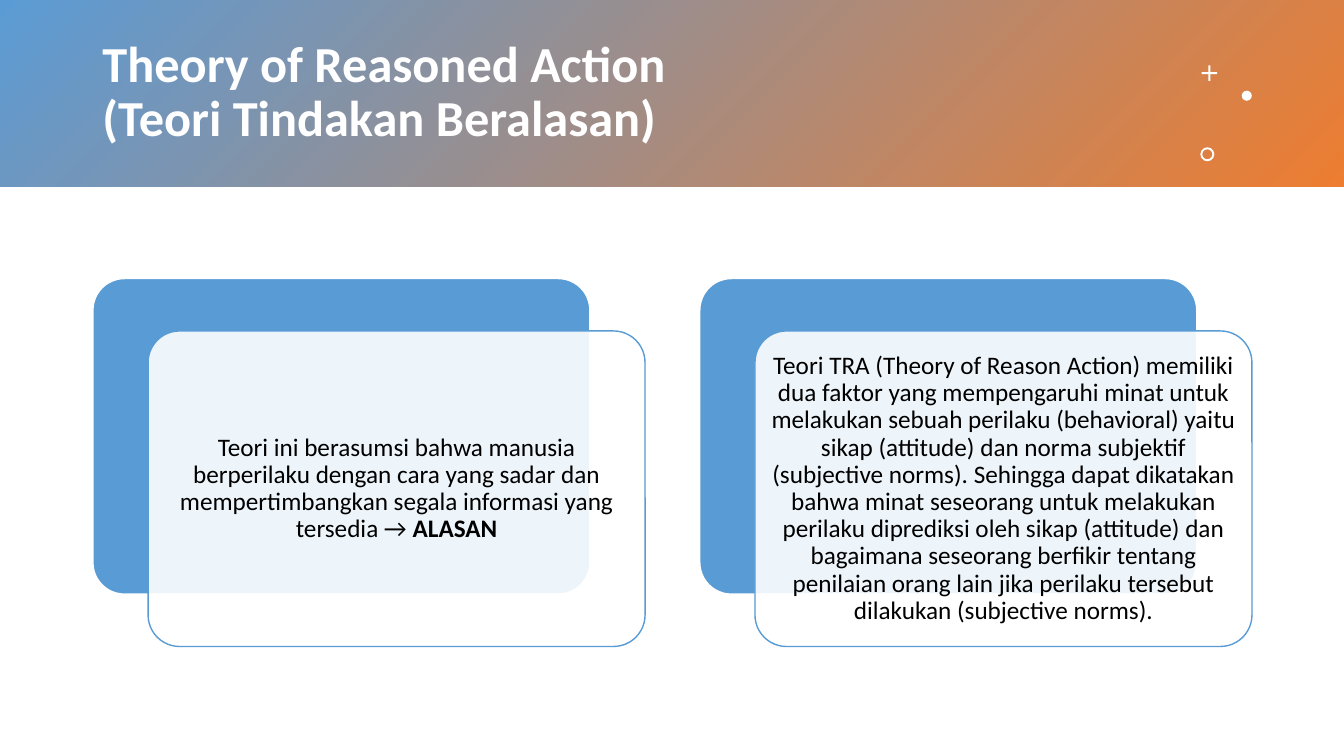
"""Build the Theory of Reasoned Action slide."""
import pptx
import pptx.util
import pptx.dml.color
import pptx.enum.shapes
import pptx.enum.text

Pt = pptx.util.Pt
RGBColor = pptx.dml.color.RGBColor
MSO_SHAPE = pptx.enum.shapes.MSO_SHAPE
MSO_ANCHOR = pptx.enum.text.MSO_ANCHOR
PP_ALIGN = pptx.enum.text.PP_ALIGN

BLUE = RGBColor(0x5B, 0x9B, 0xD5)
ORANGE = RGBColor(0xED, 0x7D, 0x31)
CARD_BLUE = RGBColor(0x59, 0x9B, 0xD5)
WHITE = RGBColor(0xFF, 0xFF, 0xFF)
BLACK = RGBColor(0, 0, 0)


def add_shape(s, kind, left, top, width, height, color, line=None):
    sp = s.shapes.add_shape(kind, Pt(left), Pt(top), Pt(width), Pt(height))
    sp.shadow.inherit = False
    sp.fill.solid()
    sp.fill.fore_color.rgb = color
    if line is None:
        sp.line.fill.background()
    else:
        sp.line.color.rgb = line
        sp.line.width = Pt(1)
    return sp


def format_text(tf, size, color, align, inset_x, inset_y):
    tf.word_wrap = True
    tf.auto_size = pptx.enum.text.MSO_AUTO_SIZE.NONE
    tf.vertical_anchor = MSO_ANCHOR.MIDDLE
    tf.margin_left = tf.margin_right = Pt(inset_x)
    tf.margin_top = tf.margin_bottom = Pt(inset_y)
    for p in tf.paragraphs:
        p.alignment = align
        p.line_spacing = 0.9
        for r in p.runs:
            r.font.name = "Calibri"
            r.font.size = Pt(size)
            r.font.color.rgb = color


prs = pptx.Presentation()
prs.slide_width, prs.slide_height = Pt(960), Pt(540)
s = prs.slides.add_slide(prs.slide_layouts[5])

title = s.shapes.title
title.left, title.top, title.width, title.height = Pt(66), Pt(23.8), Pt(774), Pt(85.7)
title.text_frame.text = "Theory of Reasoned Action\v(Teori Tindakan Beralasan)"
format_text(title.text_frame, 36, WHITE, PP_ALIGN.LEFT, 7.2, 3.6)
for r in title.text_frame.paragraphs[0].runs:
    r.font.bold = True

banner = add_shape(s, MSO_SHAPE.RECTANGLE, 0, 0, 960, 133.4, BLUE)
banner.fill.gradient()
banner.fill.gradient_angle = 315
for stop, color, position in zip(banner.fill.gradient_stops, (BLUE, ORANGE), (0, 1)):
    stop.color.rgb = color
    stop.position = position
title.element.addprevious(banner.element)

plus = add_shape(s, MSO_SHAPE.CROSS, 858.4, 46.8, 11, 11, WHITE)
plus.adjustments[0] = 0.44
dot = add_shape(s, MSO_SHAPE.OVAL, 887, 64.8, 7.2, 7.2, WHITE)
ring = add_shape(s, MSO_SHAPE.DONUT, 857.4, 105.2, 10, 10, WHITE)
ring.adjustments[0] = 0.14

CARDS = [
    [("Teori ini berasumsi bahwa manusia berperilaku dengan cara yang sadar dan "
      "mempertimbangkan segala informasi yang tersedia → ", False),
     ("ALASAN", True)],
    [("Teori TRA (Theory of Reason Action) memiliki dua faktor yang mempengaruhi "
      "minat untuk melakukan sebuah perilaku (behavioral) yaitu sikap (attitude) "
      "dan norma subjektif (subjective norms). Sehingga dapat dikatakan bahwa minat "
      "seseorang untuk melakukan perilaku diprediksi oleh sikap (attitude) dan "
      "bagaimana seseorang berfikir tentang penilaian orang lain jika perilaku "
      "tersebut dilakukan (subjective norms).", False)],
]
CARD_W, CARD_H = 355, 225.4
for i, runs in enumerate(CARDS):
    left, top = 66.4 + i * 433.5, 199
    back = add_shape(s, MSO_SHAPE.ROUNDED_RECTANGLE, left, top,
                     CARD_W, CARD_H, CARD_BLUE, WHITE)
    card = add_shape(s, MSO_SHAPE.ROUNDED_RECTANGLE, left + 39.4, top + 37.4,
                     CARD_W, CARD_H, WHITE, CARD_BLUE)
    back.adjustments[0] = card.adjustments[0] = 0.1
    white = card.fill._xPr.solidFill.srgbClr
    alpha = pptx.oxml.parse_xml(
        '<a:alpha xmlns:a="http://schemas.openxmlformats.org/drawingml/2006/main" val="90000"/>')
    white.append(alpha)
    p = card.text_frame.paragraphs[0]
    for text, bold in runs:
        r = p.add_run()
        r.text = text
        r.font.bold = bold
    format_text(card.text_frame, 18, BLACK, PP_ALIGN.CENTER, 5, 5)

prs.save("out.pptx")
